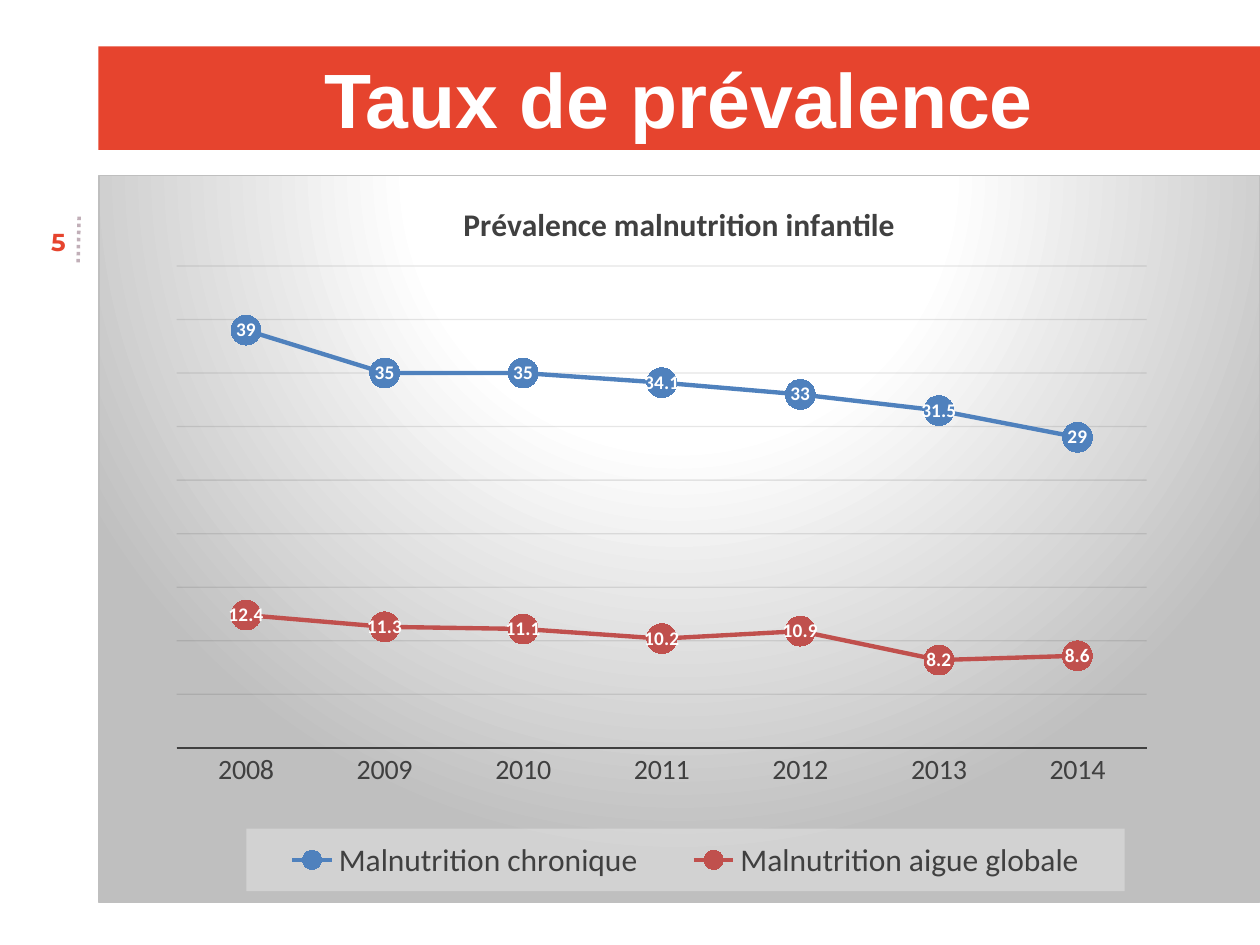
from pptx import Presentation
from pptx.chart.data import CategoryChartData as ChartData
from pptx.dml.color import RGBColor as RGB
from pptx.enum.chart import XL_CHART_TYPE as CT, XL_LABEL_POSITION as LP
from pptx.enum.chart import XL_LEGEND_POSITION as LG, XL_MARKER_STYLE as MK
from pptx.enum.chart import XL_TICK_MARK as TM
from pptx.enum.dml import MSO_LINE as DASH
from pptx.enum.shapes import MSO_CONNECTOR as CN
from pptx.enum.text import MSO_ANCHOR as VA, MSO_AUTO_SIZE as FIT, PP_ALIGN as AL
from pptx.oxml import parse_xml
from pptx.oxml.ns import nsdecls, qn
from pptx.util import Pt

# Content
TITLE = "Taux de prévalence"
NUMBER = "5"
HEAD = "Prévalence malnutrition infantile"
YEARS = [str(y) for y in range(2008, 2015)]
RATES = {
    "Malnutrition chronique": (39, 35, 35, 34.1, 33, 31.5, 29),
    "Malnutrition aigue globale": (12.4, 11.3, 11.1, 10.2, 10.9, 8.2, 8.6),
}

# Theme: type as (font, size, colour, bold)
THEME = {
    "title": ("Arial", 44, "FFFFFF", True),
    "number": ("Montserrat", 14, "E6442E", True),
    "chart": ("Calibri", 10, "000000", False),
    "head": ("Calibri", 18, "404040", True),
    "axis": ("Calibri", 16, "404040", False),
    "legend": ("Calibri", 18, "404040", False),
    "label": ("Calibri", 11, "FFFFFF", True),
    "band": "E6442E", "dots": "C1AFB8", "ink": "404040", "grid": "0D0D0D",
    "pale": "F2F2F2", "white": "FFFFFF", "edge": "BFBFBF",
    "series": ("4F81BD", "C0504D"),
}

# Layout, in points
WIDE, HIGH = 720, 540
LEFT = 56.2
BAND = (LEFT, 26.6, WIDE - LEFT, 59)
CHART = (LEFT, 100.1, WIDE - LEFT, 416.2)
NUM = (0, 123.8, 44.6, 28.1)
PLOT = (0.067, 0.124, 0.836, 0.663)
KEY = (0.127, 0.898, 0.757, 0.086)


def put(obj, **vals):
    for name, val in vals.items():
        setattr(obj, name, val)


def style(font, kind):
    face, size, tint, bold = THEME[kind]
    put(font, name=face, size=Pt(size), bold=bold)
    font.color.rgb = RGB.from_string(tint)


def paint(fill, tint):
    fill.solid()
    fill.fore_color.rgb = RGB.from_string(tint)


def stroke(line, tint, width):
    paint(line.fill, tint)
    line.width = Pt(width)


def place(shape, box):
    names = ("left", "top", "width", "height")
    put(shape, **{n: Pt(v) for n, v in zip(names, box)})


def write(frame, text, kind, align):
    frame.text = text
    put(frame, word_wrap=True, vertical_anchor=VA.MIDDLE)
    par = frame.paragraphs[0]
    par.alignment = align
    style(par.runs[0].font, kind)


def frac(box, target=""):
    """Manual chart layout in fractions of the chart area."""
    x, y, w, h = box
    return parse_xml(
        f'<c:layout {nsdecls("c")}><c:manualLayout>{target}'
        '<c:xMode val="edge"/><c:yMode val="edge"/>'
        f'<c:x val="{x}"/><c:y val="{y}"/><c:w val="{w}"/><c:h val="{h}"/>'
        '</c:manualLayout></c:layout>')


def arrange(node, layout, index):
    old = node.find(qn("c:layout"))
    if old is not None:
        node.remove(old)
    node.insert(index, layout)


def props(inner):
    return parse_xml(f'<c:spPr {nsdecls("c", "a")}>{inner}</c:spPr>')


def solid(tint, alpha=100):
    return (f'<a:solidFill><a:srgbClr val="{tint}">'
            f'<a:alpha val="{alpha * 1000}"/></a:srgbClr></a:solidFill>')


def radial(stops):
    marks = "".join(f'<a:gs pos="{p * 1000}"><a:srgbClr val="{t}"/></a:gs>'
                    for p, t in stops)
    return (f'<a:gradFill><a:gsLst>{marks}</a:gsLst><a:path path="circle">'
            '<a:fillToRect l="50000" t="-80000" r="50000" b="180000"/>'
            '</a:path></a:gradFill>')


def draw_chart(slide):
    data = ChartData()
    data.categories = YEARS
    for name, vals in RATES.items():
        data.add_series(name, vals)
    box = [Pt(v) for v in CHART]
    chart = slide.shapes.add_chart(CT.LINE_MARKERS, *box, data).chart
    style(chart.font, "chart")

    # Heading and legend
    chart.has_title = True
    head = chart.chart_title
    head.include_in_layout = False
    head.text_frame.text = HEAD
    style(head.text_frame.paragraphs[0].runs[0].font, "head")
    chart.has_legend = True
    put(chart.legend, position=LG.BOTTOM, include_in_layout=False)
    style(chart.legend.font, "legend")

    # Axes
    cat, val = chart.category_axis, chart.value_axis
    put(cat, major_tick_mark=TM.NONE, minor_tick_mark=TM.NONE)
    style(cat.tick_labels.font, "axis")
    stroke(cat.format.line, THEME["ink"], 1.5)
    put(val, minimum_scale=0, maximum_scale=45, major_unit=5,
        has_major_gridlines=True, visible=False)
    stroke(val.major_gridlines.format.line, THEME["grid"], 0.75)

    # Lines, markers and labels
    for ser, tint in zip(chart.plots[0].series, THEME["series"]):
        ser.smooth = False
        stroke(ser.format.line, tint, 2.5)
        put(ser.marker, style=MK.CIRCLE, size=17)
        paint(ser.marker.format.fill, tint)
        ser.marker.format.line.fill.background()
        put(ser.data_labels, show_value=True, position=LP.CENTER)
        style(ser.data_labels.font, "label")

    # Layouts, transparency and the radial ground
    root = chart.element
    plot, key = root.find(".//" + qn("c:plotArea")), root.find(".//" + qn("c:legend"))
    arrange(plot, frac(PLOT, '<c:layoutTarget val="inner"/>'), 0)
    arrange(key, frac(KEY), 1)
    key.find(qn("c:txPr")).addprevious(props(solid(THEME["pale"], 39)))
    grid = root.find(".//" + qn("c:majorGridlines"))
    grid.find(".//" + qn("a:srgbClr")).append(
        parse_xml(f'<a:alpha {nsdecls("a")} val="10000"/>'))
    white, edge = THEME["white"], THEME["edge"]
    ground = radial([(0, white), (39, white), (100, edge)])
    border = f'<a:ln w="{Pt(0.75)}">{solid(edge)}</a:ln>'
    root.find(qn("c:txPr")).addprevious(props(ground + border))


def main():
    prs = Presentation()
    put(prs, slide_width=Pt(WIDE), slide_height=Pt(HIGH))
    slide = prs.slides.add_slide(prs.slide_layouts[5])

    # Dotted rule beside the slide number
    x, y, w, h = NUM
    rule = slide.shapes.add_connector(
        CN.STRAIGHT, Pt(x + w + 0.6), Pt(y), Pt(x + w), Pt(y + h))
    stroke(rule.line, THEME["dots"], 2)
    rule.line.dash_style = DASH.ROUND_DOT
    rule.element.spPr.append(parse_xml(f'<a:effectLst {nsdecls("a")}/>'))

    # Title band
    title = slide.shapes.title
    place(title, BAND)
    paint(title.fill, THEME["band"])
    write(title.text_frame, TITLE, "title", AL.CENTER)
    sides = ("left", "top", "right", "bottom")
    put(title.text_frame, auto_size=FIT.SHAPE_TO_FIT_TEXT,
        **{f"margin_{s}": Pt(2.9) for s in sides})

    # Slide number
    num = slide.shapes.add_textbox(*[Pt(v) for v in NUM])
    write(num.text_frame, NUMBER, "number", AL.RIGHT)

    draw_chart(slide)
    prs.save("out.pptx")


if __name__ == "__main__":
    main()
